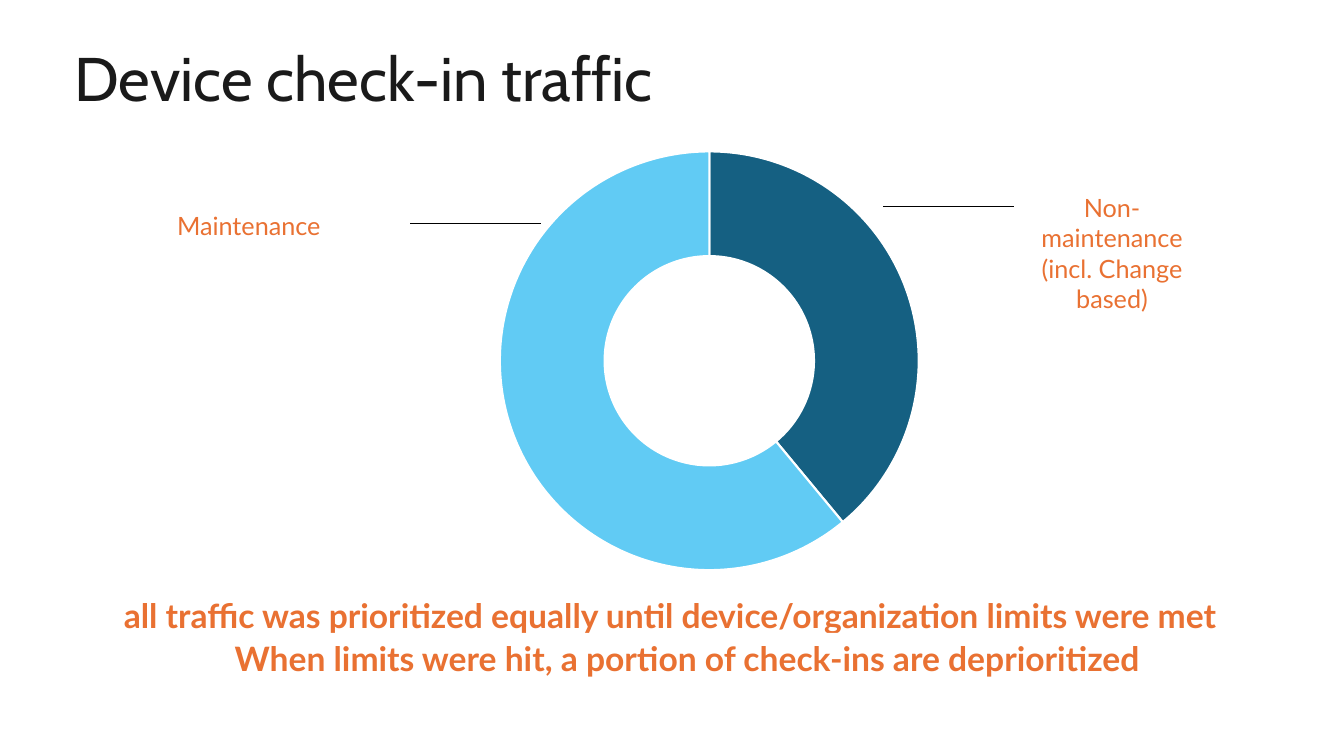
from dataclasses import dataclass

from lxml import etree
from pptx import Presentation
from pptx import util as u
from pptx.chart.data import CategoryChartData
from pptx.dml.color import RGBColor
from pptx.enum import chart as charts, shapes, text
from pptx.oxml import parse_xml
from pptx.oxml.ns import nsdecls, qn

PX = u.Inches(0.01)


@dataclass(frozen=True)
class Theme:
    heading_font: str = "Cabin"
    body_font: str = "Lato"
    ink: str = "1A1A1A"
    accent: str = "E97132"
    line: str = "000000"
    paper: str = "FFFFFF"
    slices: tuple = ("156082", "61CBF4")
    title_size: int = 44
    message_size: int = 24
    label_size: int = 18
    chart_size: int = 10


THEME = Theme()


def color(value):
    return RGBColor.from_string(value)


def px(*lengths):
    return [length * PX for length in lengths]


def write(shape, words, *, size, font=THEME.body_font, fill=THEME.accent, bold=False,
          align=text.PP_ALIGN.CENTER, anchor=text.MSO_ANCHOR.TOP, spacing=None):
    frame = shape.text_frame
    frame.word_wrap = True
    frame.vertical_anchor = anchor
    paragraph = frame.paragraphs[0]
    paragraph.alignment = align
    paragraph.line_spacing = spacing
    run = paragraph.add_run()
    run.text = words
    run.font.name = font
    run.font.size = u.Pt(size)
    run.font.bold = bold
    run.font.color.rgb = color(fill)


def add_text(slide, box, words, **style):
    write(slide.shapes.add_textbox(*px(*box)), words, **style)


def add_panel(slide, box, words, **style):
    panel = slide.shapes.add_shape(shapes.MSO_SHAPE.RECTANGLE, *px(*box))
    panel.shadow.inherit = False
    panel.fill.solid()
    panel.fill.fore_color.rgb = color(THEME.paper)
    panel.line.fill.background()
    write(panel, words, **style)


def add_leader(slide, left, top, length):
    """Draw a horizontal line from a label to the ring."""
    leader = slide.shapes.add_connector(
        shapes.MSO_CONNECTOR.STRAIGHT, *px(left, top, left + length, top))
    leader.line.color.rgb = color(THEME.line)
    leader.line.width = u.Pt(1)
    etree.SubElement(leader._element.spPr, qn("a:effectLst"))


def set_plot_layout(chart, **fractions):
    """Place the plot by its x, y, w and h as fractions of the chart."""
    plot_area = chart._chartSpace.chart.plotArea
    for automatic in plot_area.findall(qn("c:layout")):
        plot_area.remove(automatic)
    modes = '<c:xMode val="edge"/><c:yMode val="edge"/>'
    sizes = "".join(f'<c:{key} val="{value}"/>' for key, value in fractions.items())
    plot_area.insert(0, parse_xml(
        f'<c:layout {nsdecls("c")}><c:manualLayout><c:layoutTarget val="inner"/>'
        f"{modes}{sizes}</c:manualLayout></c:layout>"))


def add_ring(slide, box, values):
    data = CategoryChartData()
    data.categories = [str(number) for number in range(1, len(values) + 1)]
    data.add_series("Series 1", values)
    chart = slide.shapes.add_chart(charts.XL_CHART_TYPE.DOUGHNUT, *px(*box), data).chart
    chart.has_legend = False
    chart.has_title = False
    chart.font.name = THEME.body_font
    chart.font.size = u.Pt(THEME.chart_size)
    chart.font.color.rgb = color(THEME.line)
    set_plot_layout(chart, x=0.24, y=0.03, w=0.52, h=0.94)
    plot = chart.plots[0]
    plot.vary_by_categories = True
    plot._element.find(qn("c:holeSize")).set("val", "70")
    for index, slice_color in enumerate(THEME.slices):
        point = plot.series[0].points[index].format
        point.fill.solid()
        point.fill.fore_color.rgb = color(slice_color)
        point.line.color.rgb = color(THEME.paper)
        point.line.width = u.Pt(1.5)


def main():
    presentation = Presentation()
    presentation.slide_width, presentation.slide_height = px(1333, 750)
    slide = presentation.slides.add_slide(presentation.slide_layouts[6])

    add_text(slide, (64, 50, 1205, 61), "Device check-in traffic",
             size=THEME.title_size, font=THEME.heading_font, fill=THEME.ink,
             align=text.PP_ALIGN.LEFT, anchor=text.MSO_ANCHOR.MIDDLE, spacing=0.9)

    message = dict(size=THEME.message_size, bold=True)
    add_text(slide, (113, 585, 1248, 50),
             "all traffic was prioritized equally until device/organization limits were met",
             align=text.PP_ALIGN.LEFT, **message)
    add_panel(slide, (85, 628, 1193, 50),
              "When limits were hit, a portion of check-ins are deprioritized", **message)

    add_text(slide, (108, 204, 284, 40), "Maintenance ", size=THEME.label_size)
    add_leader(slide, 407, 222, 130)
    add_text(slide, (1008, 186, 190, 131), "Non-maintenance (incl. Change based)",
             size=THEME.label_size)
    add_leader(slide, 876, 205, 130)

    add_ring(slide, (304, 134, 799, 448), (39, 61))
    presentation.save("out.pptx")


if __name__ == "__main__":
    main()
